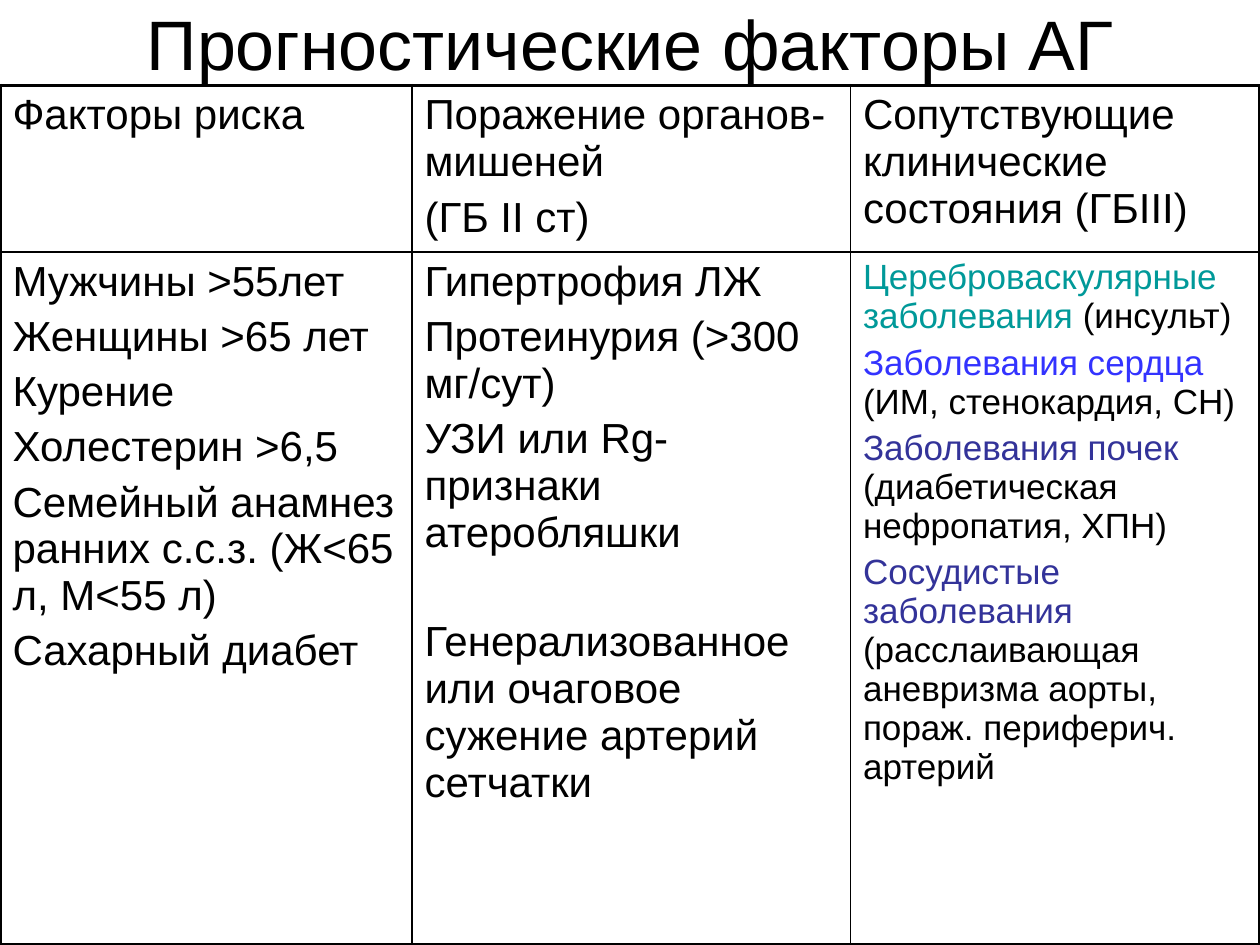
from lxml.etree import SubElement
from pptx import Presentation
from pptx.dml.color import RGBColor
from pptx.enum.text import MSO_ANCHOR, PP_ALIGN
from pptx.oxml.ns import qn
from pptx.util import Inches, Pt

COLORS = {"black": "000000", "teal": "009999", "blue": "3333FF", "indigo": "333399"}
FONT = "Arial"
TITLE = "Прогностические факторы АГ"
HEADERS = [
    ["Факторы риска"],
    ["Поражение органов-мишеней", "(ГБ II ст)"],
    ["Сопутствующие клинические состояния (ГБIII)"],
]
RISK_FACTORS = [
    "Мужчины >55лет",
    "Женщины >65 лет",
    "Курение",
    "Холестерин >6,5",
    "Семейный анамнез ранних с.с.з. (Ж<65 л, М<55 л)",
    "Сахарный диабет",
]
RETINA = "Генерализованное или очаговое сужение артерий сетчатки"
ORGAN_DAMAGE = [
    "Гипертрофия ЛЖ",
    "Протеинурия (>300 мг/сут)",
    "УЗИ или Rg-признаки атеробляшки",
    RETINA,
]
CONDITIONS = [
    [("Цереброваскулярные заболевания", "teal"), (" (инсульт)", "black")],
    [("Заболевания сердца", "blue"), (" (ИМ, стенокардия, СН)", "black")],
    [("Заболевания почек", "indigo"), (" (диабетическая нефропатия, ХПН)", "black")],
    [("Сосудистые заболевания", "indigo"),
     (" (расслаивающая аневризма аорты, пораж. периферич. артерий", "black")],
]
ROWS = [HEADERS, [RISK_FACTORS, ORGAN_DAMAGE, CONDITIONS]]
COLUMN_WIDTHS = [3.27, 3.48, 3.25]
ROW_HEIGHTS = [1.32, 5.5]
TABLE_TOP = 0.68
WIDE_GAPS = {RETINA: 36}
OUTER, INNER = 2.25, 1


def rgb(name):
    return RGBColor.from_string(COLORS[name])


def set_borders(cell, widths):
    properties = cell._tc.get_or_add_tcPr()
    for side, width in widths.items():
        line = SubElement(properties, qn(f"a:ln{side}"), w=str(Pt(width)))
        fill = SubElement(line, qn("a:solidFill"))
        SubElement(fill, qn("a:srgbClr"), val=COLORS["black"])


def write_cell(cell, items, size):
    frame = cell.text_frame
    for index, item in enumerate(items):
        paragraph = frame.add_paragraph() if index else frame.paragraphs[0]
        paragraph.font.name = FONT
        paragraph.font.size = Pt(size)
        gap = WIDE_GAPS.get(item, 0.2 * size) if isinstance(item, str) else 0.2 * size
        paragraph.space_before = Pt(gap)
        runs = [(item, "black")] if isinstance(item, str) else item
        for text, color in runs:
            run = paragraph.add_run()
            run.text = text
            run.font.color.rgb = rgb(color)


def add_title(slide):
    title = slide.shapes.title
    title.left, title.top = Inches(0.5), Inches(0)
    title.width, title.height = Inches(9), Inches(TABLE_TOP)
    title.text_frame.text = TITLE
    title.text_frame.vertical_anchor = MSO_ANCHOR.MIDDLE
    paragraph = title.text_frame.paragraphs[0]
    paragraph.alignment = PP_ALIGN.CENTER
    paragraph.font.name = FONT
    paragraph.font.size = Pt(40)
    paragraph.font.color.rgb = rgb("black")


def add_factor_table(slide):
    last_row, last_column = len(ROWS) - 1, len(COLUMN_WIDTHS) - 1
    table = slide.shapes.add_table(
        len(ROWS), len(COLUMN_WIDTHS), Inches(0), Inches(TABLE_TOP),
        Inches(sum(COLUMN_WIDTHS)), Inches(sum(ROW_HEIGHTS))).table
    table.first_row = table.horz_banding = False
    for column, width in zip(table.columns, COLUMN_WIDTHS):
        column.width = Inches(width)
    for row, height in zip(table.rows, ROW_HEIGHTS):
        row.height = Inches(height)
    for r, contents in enumerate(ROWS):
        for c, items in enumerate(contents):
            cell = table.cell(r, c)
            set_borders(cell, {
                "L": OUTER if c == 0 else INNER,
                "R": OUTER if c == last_column else INNER,
                "T": OUTER if r == 0 else INNER,
                "B": OUTER if r == last_row else INNER,
            })
            cell.fill.background()
            write_cell(cell, items, 20 if items is CONDITIONS else 24)


def main():
    presentation = Presentation()
    presentation.slide_width, presentation.slide_height = Inches(10), Inches(7.5)
    slide = presentation.slides.add_slide(presentation.slide_layouts[5])
    add_title(slide)
    add_factor_table(slide)
    presentation.save("out.pptx")


if __name__ == "__main__":
    main()
